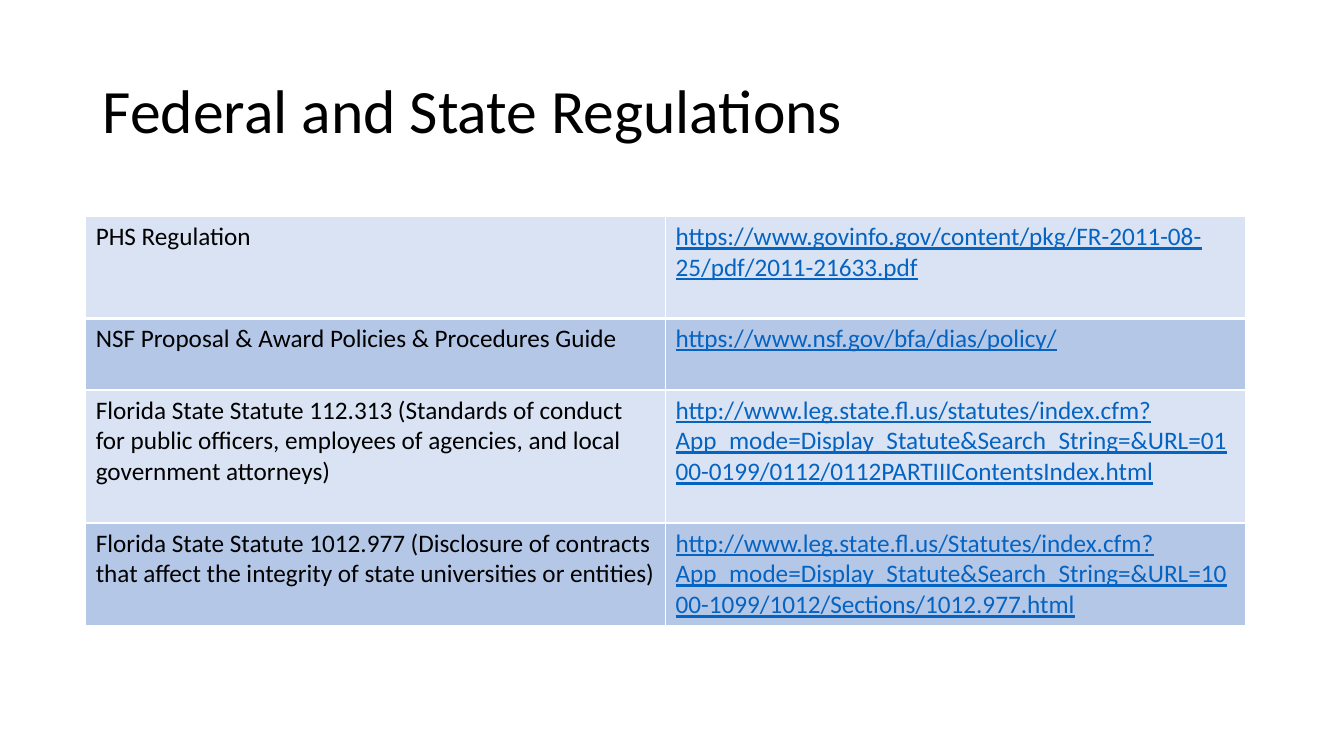
import dataclasses

import lxml.etree
import pptx
import pptx.dml.color
import pptx.enum.text
import pptx.oxml.ns
import pptx.util

Inches = pptx.util.Inches


@dataclasses.dataclass(frozen=True)
class Theme:
    font: str = "Calibri"
    title_size: int = 44
    table_size: int = 18
    text: str = "000000"
    link: str = "0563C1"
    border: str = "FFFFFF"
    bands: tuple = ("DAE3F3", "B4C7E7")


REGULATIONS = [
    ("PHS Regulation",
     "https://www.govinfo.gov/content/pkg/FR-2011-08-25/pdf/2011-21633.pdf", 1.01),
    ("NSF Proposal & Award Policies & Procedures Guide",
     "https://www.nsf.gov/bfa/dias/policy/", 0.71),
    ("Florida State Statute 112.313 (Standards of conduct for public officers, "
     "employees of agencies, and local government attorneys)",
     "http://www.leg.state.fl.us/statutes/index.cfm?App_mode=Display_Statute"
     "&Search_String=&URL=0100-0199/0112/0112PARTIIIContentsIndex.html", 1.32),
    ("Florida State Statute 1012.977 (Disclosure of contracts that affect the "
     "integrity of state universities or entities)",
     "http://www.leg.state.fl.us/Statutes/index.cfm?App_mode=Display_Statute"
     "&Search_String=&URL=1000-1099/1012/Sections/1012.977.html", 1.02),
]


def write(para, text, *, font, size, color, underline=False):
    span = para.add_run()
    span.text = text
    span.font.name = font
    span.font.size = pptx.util.Pt(size)
    span.font.color.rgb = pptx.dml.color.RGBColor.from_string(color)
    span.font.underline = underline


def set_borders(cell, color, widths):
    properties = cell._tc.get_or_add_tcPr()
    for index, (side, width) in enumerate(widths.items()):
        line = lxml.etree.Element(
            pptx.oxml.ns.qn(f"a:ln{side}"), w=str(pptx.util.Pt(width)))
        fill = lxml.etree.SubElement(line, pptx.oxml.ns.qn("a:solidFill"))
        lxml.etree.SubElement(fill, pptx.oxml.ns.qn("a:srgbClr"), val=color)
        properties.insert(index, line)


class SlideBuilder:
    def __init__(self, slide, theme):
        self.slide = slide
        self.theme = theme

    def title(self, text, left, top, width, height):
        box = self.slide.shapes.title
        box.left, box.top = Inches(left), Inches(top)
        box.width, box.height = Inches(width), Inches(height)
        frame = box.text_frame
        frame.word_wrap = True
        frame.auto_size = pptx.enum.text.MSO_AUTO_SIZE.NONE
        frame.vertical_anchor = pptx.enum.text.MSO_ANCHOR.MIDDLE
        para = frame.paragraphs[0]
        para.alignment = pptx.enum.text.PP_ALIGN.LEFT
        para.line_spacing = 0.9
        write(para, text, font=self.theme.font, size=self.theme.title_size,
              color=self.theme.text)

    def table(self, rows, left, top, width):
        theme = self.theme
        height = sum(row[-1] for row in rows)
        table = self.slide.shapes.add_table(
            len(rows), 2, Inches(left), Inches(top), Inches(width),
            Inches(height)).table
        table.first_row = False
        for index, (name, address, row_height) in enumerate(rows):
            table.rows[index].height = Inches(row_height)
            widths = {"L": 1, "R": 1, "T": 3 if index == 1 else 1,
                      "B": 3 if index == 0 else 1}
            band = theme.bands[index % len(theme.bands)]
            for column, text in enumerate((name, address)):
                cell = table.cell(index, column)
                cell.fill.solid()
                cell.fill.fore_color.rgb = pptx.dml.color.RGBColor.from_string(band)
                set_borders(cell, theme.border, widths)
                is_link = column == 1
                write(cell.text_frame.paragraphs[0], text, font=theme.font,
                      size=theme.table_size, underline=is_link,
                      color=theme.link if is_link else theme.text)


def main():
    deck = pptx.Presentation()
    deck.slide_width, deck.slide_height = Inches(13.33), Inches(7.5)
    page = deck.slides.add_slide(deck.slide_layouts[5])
    builder = SlideBuilder(page, Theme())
    builder.title("Federal and State Regulations", 0.92, 0.4, 11.5, 1.45)
    builder.table(REGULATIONS, 0.85, 2.15, 11.5)
    deck.save("out.pptx")


if __name__ == "__main__":
    main()
